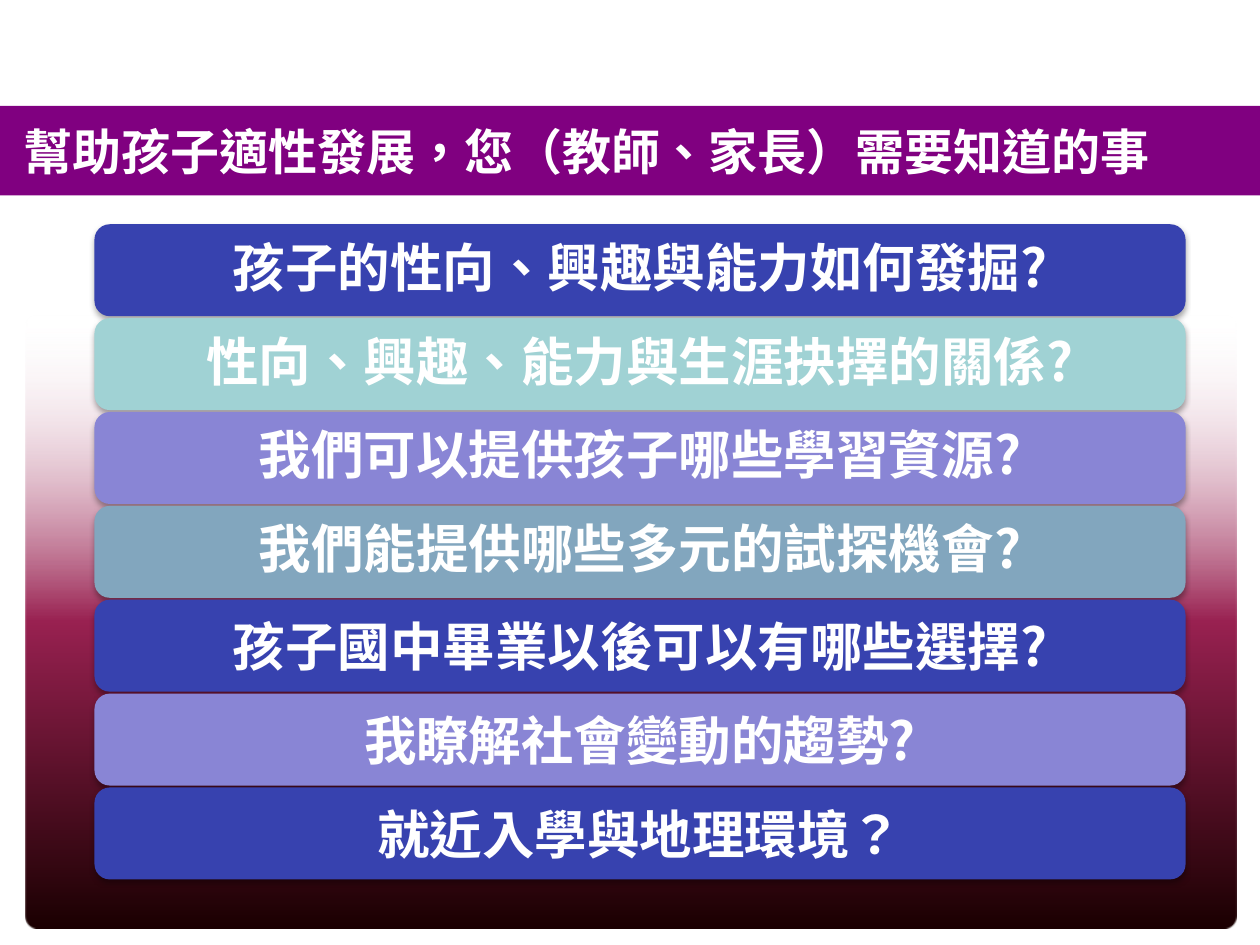
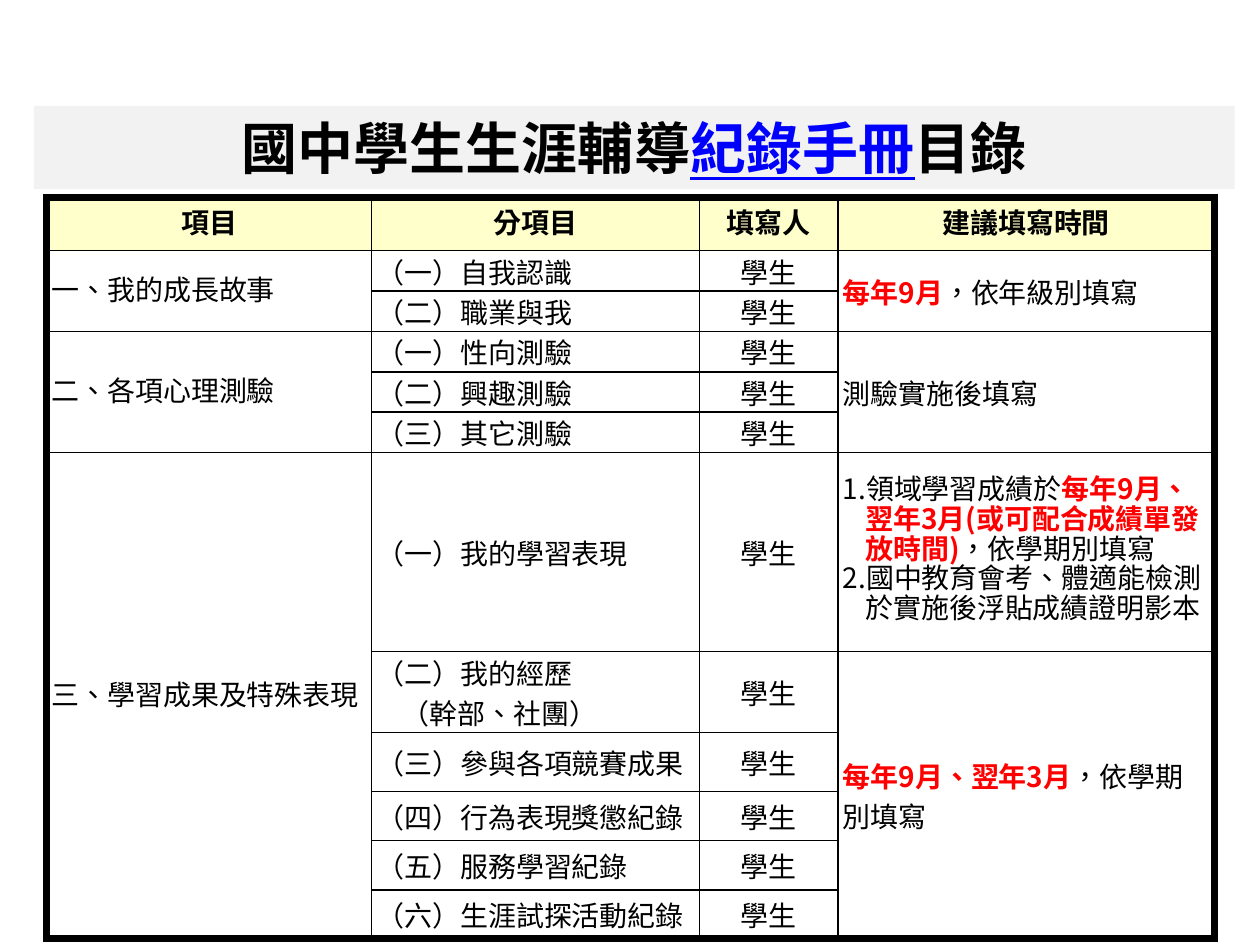
from dataclasses import dataclass

from lxml import etree
from pptx import Presentation
from pptx.dml.color import RGBColor
from pptx.enum.shapes import MSO_SHAPE
from pptx.enum.text import MSO_ANCHOR, PP_ALIGN
from pptx.oxml.ns import qn
from pptx.util import Inches, Pt

RECTANGLE = MSO_SHAPE.RECTANGLE
ROUNDED = MSO_SHAPE.ROUNDED_RECTANGLE
LEFT, CENTER, JUSTIFY = PP_ALIGN.LEFT, PP_ALIGN.CENTER, PP_ALIGN.JUSTIFY
MIDDLE = MSO_ANCHOR.MIDDLE


@dataclass(frozen=True)
class Theme:
    font: str = "Noto Sans CJK SC"
    latin_font: str = "Calibri"
    white: str = "FFFFFF"
    black: str = "000000"
    red: str = "FF0000"
    link: str = "0000FF"
    purple: str = "800080"
    pale_gray: str = "F2F2F2"
    cream: str = "FFFFCC"
    navy: str = "3742AF"
    aqua: str = "A0D2D4"
    violet: str = "8985D5"
    steel: str = "82A6BE"
    crimson: str = "992151"
    maroon: str = "1A0001"
    banner_size: int = 28
    question_size: int = 30
    contents_size: int = 32
    table_size: int = 16
    outer_border: float = 4.5
    inner_border: float = 1


THEME = Theme()

BANNER = "幫助孩子適性發展，您（教師、家長）需要知道的事"
QUESTIONS = [
    ("孩子的性向、興趣與能力如何發掘?", THEME.navy, 0.9),
    ("性向、興趣、能力與生涯抉擇的關係?", THEME.aqua, 0.9),
    ("我們可以提供孩子哪些學習資源?", THEME.violet, 0.9),
    ("我們能提供哪些多元的試探機會?", THEME.steel, 0.9),
    ("孩子國中畢業以後可以有哪些選擇?", THEME.navy, 1.0),
    ("我瞭解社會變動的趨勢?", THEME.violet, 1.0),
    ("就近入學與地理環境？", THEME.navy, 1.0),
]

RED = {"color": THEME.red, "bold": True}
CONTENTS_TITLE = [
    "國中學生生涯輔導",
    ("紀錄手冊", {"color": THEME.link, "underline": True}),
    ("目錄", {"font": THEME.latin_font}),
]
HEADERS = ["項目", "分項目", "填寫人", "建議填寫時間"]
WRITER = "學生"
SECTIONS = [
    ("一、我的成長故事", ["（一）自我認識", "（二）職業與我"]),
    ("二、各項心理測驗", ["（一）性向測驗", "（二）興趣測驗", "（三）其它測驗"]),
    ("三、學習成果及特殊表現", [
        "（一）我的學習表現", "（二）我的經歷", "（三）參與各項競賽成果",
        "（四）行為表現獎懲紀錄", "（五）服務學習紀錄", "（六）生涯試探活動紀錄",
    ]),
]
SUBITEM_NOTES = {"（二）我的經歷": "（幹部、社團）"}
TIMES = [
    (2, [[("每年9月", RED), "，依年級別填寫"]], {}),
    (3, ["測驗實施後填寫"], {}),
    (1, [
        ["1.領域學習成績於",
         ("每年9月、翌年3月(或可配合成績單發放時間)", RED),
         "，依學期別填寫"],
        "2.國中教育會考、體適能檢測於實施後浮貼成績證明影本",
    ], {"margin": 0.18, "indent": -0.18, "line_spacing": Pt(17)}),
    (5, [[("每年9月、翌年3月", RED), "，依學期別填寫"]], {}),
]
COLUMN_WIDTHS = [2.58, 2.6, 1.1, 2.99]
ROW_HEIGHTS = [0.42] + [0.29] * 5 + [1.58, 0.55, 0.47] + [0.39] * 3


def rgb(color):
    return RGBColor.from_string(color)


def add_element(parent, tag, **attributes):
    element = etree.SubElement(parent, qn(tag))
    for name, value in attributes.items():
        element.set(name, str(value))
    return element


def write_run(paragraph, text, size, color, bold, underline=False, font=THEME.font):
    run = paragraph.add_run()
    run.text = text
    run.font.size = Pt(size)
    run.font.bold = bold
    run.font.underline = underline
    run.font.color.rgb = rgb(color)
    run.font.name = font
    properties = run.font._element
    properties.set("lang", "zh-TW")
    add_element(properties, "a:ea", typeface=THEME.font)


def write_text(frame, paragraphs, align=LEFT, line_spacing=None, margin=0, indent=0,
               size=THEME.table_size, color=THEME.black, bold=False):
    frame.word_wrap = True
    for index, runs in enumerate(paragraphs):
        paragraph = frame.paragraphs[0] if index == 0 else frame.add_paragraph()
        paragraph.alignment = align
        if line_spacing:
            paragraph.line_spacing = line_spacing
        properties = paragraph._p.get_or_add_pPr()
        properties.set("marL", str(Inches(margin)))
        properties.set("indent", str(Inches(indent)))
        for run in [runs] if isinstance(runs, str) else runs:
            text, changes = (run, {}) if isinstance(run, str) else run
            write_run(paragraph, text, **{"size": size, "color": color, "bold": bold, **changes})


def add_panel(slide, kind, box, color):
    shape = slide.shapes.add_shape(kind, *map(Inches, box))
    shape.shadow.inherit = False
    shape.line.fill.background()
    shape.fill.solid()
    shape.fill.fore_color.rgb = rgb(color)
    shape.text_frame.vertical_anchor = MIDDLE
    return shape


def fade_to_dark(shape):
    properties = shape._element.spPr
    solid = properties.find(qn("a:solidFill"))
    gradient = etree.Element(qn("a:gradFill"), rotWithShape="1")
    stops = add_element(gradient, "a:gsLst")
    for position, color, alpha in [(0, THEME.white, 0), (50, THEME.crimson, 100), (100, THEME.maroon, 100)]:
        stop = add_element(stops, "a:gs", pos=position * 1000)
        shade = add_element(stop, "a:srgbClr", val=color)
        add_element(shade, "a:alpha", val=alpha * 1000)
    add_element(gradient, "a:lin", ang=90 * 60000, scaled=0)
    properties.replace(solid, gradient)


def add_soft_shadow(shape):
    effects = shape._element.spPr.find(qn("a:effectLst"))
    shadow = add_element(effects, "a:outerShdw", blurRad=Pt(3.1), dist=Pt(1.8),
                         dir=90 * 60000, rotWithShape=0)
    color = add_element(shadow, "a:srgbClr", val=THEME.black)
    add_element(color, "a:alpha", val=35000)


def build_questions(slide):
    backdrop = add_panel(slide, ROUNDED, (0.2, 2.5, 9.61, 4.87), THEME.maroon)
    backdrop.adjustments[0] = 0.022
    fade_to_dark(backdrop)
    top, pitch = 1.78, 0.745
    for index, (question, color, spacing) in enumerate(QUESTIONS):
        bar = add_panel(slide, ROUNDED, (0.75, top + index * pitch, 8.66, 0.73), color)
        add_soft_shadow(bar)
        write_text(bar.text_frame, [question], align=CENTER, line_spacing=spacing,
                   size=THEME.question_size, color=THEME.white, bold=True)
    banner = add_panel(slide, RECTANGLE, (0, 0.84, 10, 0.71), THEME.purple)
    banner.text_frame.margin_left = Inches(0.19)
    write_text(banner.text_frame, [BANNER], align=JUSTIFY,
               size=THEME.banner_size, color=THEME.white, bold=True)


def style_cell(cell, row, column, color):
    cell.vertical_anchor = MIDDLE
    cell.margin_left = cell.margin_right = Inches(0.04)
    cell.margin_top = cell.margin_bottom = 0
    outer_edges = {
        "a:lnL": column == 0,
        "a:lnR": column == len(COLUMN_WIDTHS) - 1,
        "a:lnT": row == 0,
        "a:lnB": row + cell.span_height == len(ROW_HEIGHTS),
    }
    properties = cell._tc.get_or_add_tcPr()
    for tag, outer in outer_edges.items():
        width = THEME.outer_border if outer else THEME.inner_border
        line = add_element(properties, tag, w=Pt(width))
        add_element(add_element(line, "a:solidFill"), "a:srgbClr", val=THEME.black)
    cell.fill.solid()
    cell.fill.fore_color.rgb = rgb(color)


def fill_merged(table, row, column, height, paragraphs, **text_format):
    cell = table.cell(row, column)
    if height > 1:
        cell.merge(table.cell(row + height - 1, column))
    write_text(cell.text_frame, paragraphs, **text_format)
    return row + height


def build_contents(slide):
    table = slide.shapes.add_table(
        len(ROW_HEIGHTS), len(COLUMN_WIDTHS), Inches(0.37), Inches(1.57),
        Inches(sum(COLUMN_WIDTHS)), Inches(sum(ROW_HEIGHTS))).table
    for column, width in zip(table.columns, COLUMN_WIDTHS):
        column.width = Inches(width)
    for row, height in zip(table.rows, ROW_HEIGHTS):
        row.height = Inches(height)

    for column, header in enumerate(HEADERS):
        write_text(table.cell(0, column).text_frame, [header], align=CENTER,
                   line_spacing=Pt(20), bold=True)
    row = 1
    for section, subitems in SECTIONS:
        for offset, subitem in enumerate(subitems):
            frame = table.cell(row + offset, 1).text_frame
            write_text(frame, [subitem])
            if subitem in SUBITEM_NOTES:
                note = frame.add_paragraph()
                note._p.get_or_add_pPr().set("marL", str(Inches(0.2)))
                write_run(note, SUBITEM_NOTES[subitem], THEME.table_size, THEME.black, False)
            write_text(table.cell(row + offset, 2).text_frame, [WRITER], align=CENTER)
        row = fill_merged(table, row, 0, len(subitems), [section],
                          margin=0.27, indent=-0.27, line_spacing=Pt(20))
    row = 1
    for height, paragraphs, text_format in TIMES:
        row = fill_merged(table, row, 3, height, paragraphs, **text_format)

    for row in range(len(ROW_HEIGHTS)):
        for column in range(len(COLUMN_WIDTHS)):
            style_cell(table.cell(row, column), row, column, THEME.white if row else THEME.cream)

    title = add_panel(slide, RECTANGLE, (0.27, 0.84, 9.53, 0.66), THEME.pale_gray)
    write_text(title.text_frame, [CONTENTS_TITLE], align=CENTER,
               size=THEME.contents_size, bold=True)


def main():
    presentation = Presentation()
    presentation.slide_width = Inches(10)
    presentation.slide_height = Inches(7.5)
    blank_layout = presentation.slide_layouts[6]
    for build in (build_questions, build_contents):
        build(presentation.slides.add_slide(blank_layout))
    presentation.save("out.pptx")


if __name__ == "__main__":
    main()
